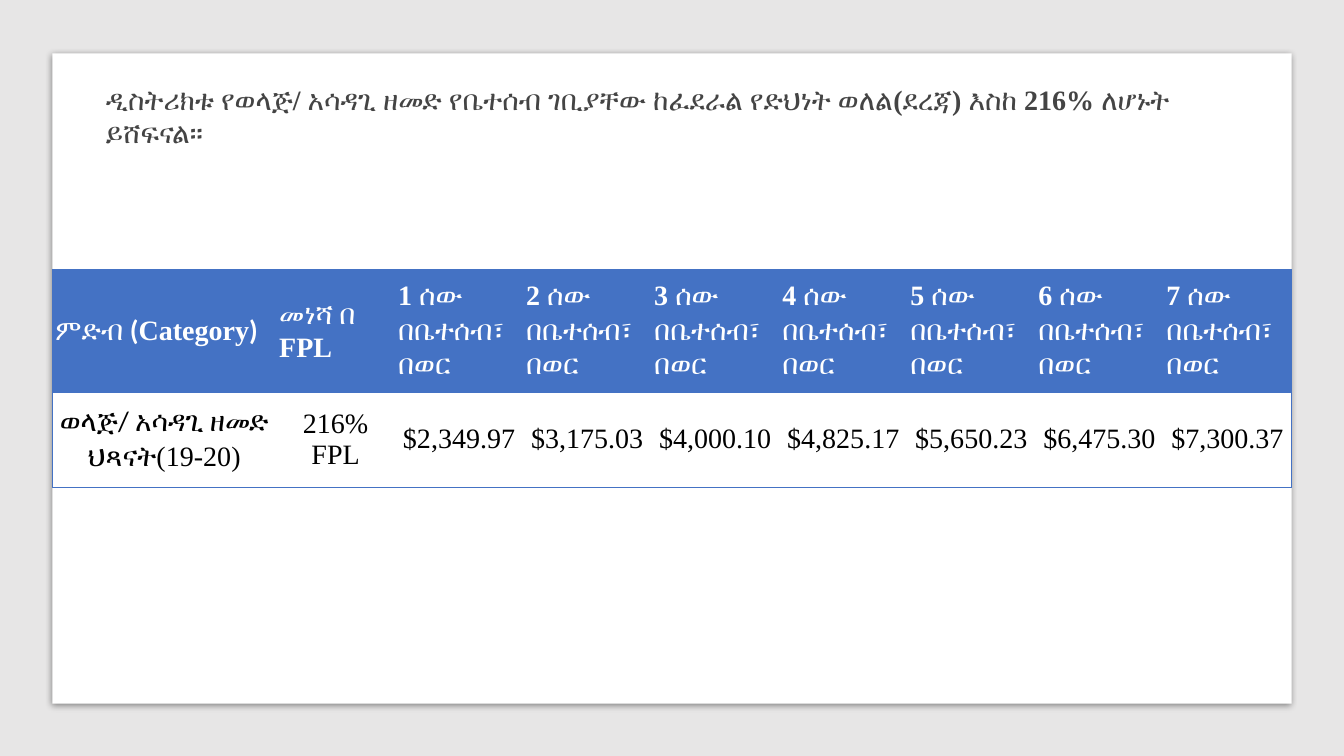
from lxml.etree import SubElement
from pptx import Presentation
from pptx.dml.color import RGBColor
from pptx.enum.shapes import MSO_SHAPE as Shape
from pptx.enum.text import MSO_ANCHOR as Anchor, PP_ALIGN as Align
from pptx.oxml import parse_xml
from pptx.oxml.ns import nsdecls, qn
from pptx.util import Inches, Pt

COLORS = {"backdrop": "E7E6E6", "card": "FFFFFF", "title": "444444",
          "accent": "4472C4", "header": "FFFFFF", "body": "000000"}
LATIN, ETHIOPIC = "Times New Roman", "Calibri"
NO_STYLE = "{2D5ABB26-0587-4C30-8999-92F81FD0307C}"

TITLE = "ዲስትሪክቱ የወላጅ/ አሳዳጊ ዘመድ የቤተሰብ ገቢያቸው ከፈደራል የድህነት ወለል(ደረጃ) እስከ 216% ለሆኑት ይሸፍናል፡፡"
HEADER = [
    [("ምድብ (", ETHIOPIC), ("Category", LATIN), (")", ETHIOPIC)],
    [("መነሻ በ", ETHIOPIC), (" FPL", LATIN)],
] + [[(f"{size} ", LATIN), ("ሰው በቤተሰብ፣ በወር", ETHIOPIC)] for size in range(1, 8)]
INCOMES = ["$2,349.97", "$3,175.03", "$4,000.10", "$4,825.17",
           "$5,650.23", "$6,475.30", "$7,300.37"]
BODY = [
    [("ወላጅ/ አሳዳጊ ዘመድ ህጻናት", ETHIOPIC), ("(19-20)", LATIN)],
] + [[(text, LATIN)] for text in ["216% FPL"] + INCOMES]


class SlideBuilder:
    """Draws on one slide; lengths are percentages of its width and height."""

    def __init__(self, prs):
        self.prs = prs
        self.s = prs.slides.add_slide(prs.slide_layouts[6])

    def x(self, share):
        return round(self.prs.slide_width * share / 100)

    def y(self, share):
        return round(self.prs.slide_height * share / 100)

    def box(self, left, top, width, height):
        return self.x(left), self.y(top), self.x(width), self.y(height)

    def color(self, name):
        return RGBColor.from_string(COLORS[name])

    def panel(self, area, color, shadow=False):
        sp = self.s.shapes.add_shape(Shape.RECTANGLE, *self.box(*area))
        sp.fill.solid()
        sp.fill.fore_color.rgb = self.color(color)
        sp.line.fill.background()
        sp.shadow.inherit = False
        if shadow:
            effects = sp._element.spPr.find(qn("a:effectLst"))
            outer = SubElement(effects, qn("a:outerShdw"), blurRad=str(Pt(5)),
                               dist=str(Pt(1.4)), dir="5400000", rotWithShape="0")
            black = SubElement(outer, qn("a:srgbClr"), val="000000")
            SubElement(black, qn("a:alpha"), val="43000")

    def add_runs(self, p, runs, color, bold):
        for text, font in runs:
            r = p.add_run()
            r.text = text
            r.font.size, r.font.bold, r.font.name = Pt(20), bold, font
            r.font.color.rgb = self.color(color)
            SubElement(r._r.rPr, qn("a:cs"), typeface=font)

    def title(self, area, text):
        tf = self.s.shapes.add_textbox(*self.box(*area)).text_frame
        tf.word_wrap = True
        tf.vertical_anchor = Anchor.MIDDLE
        tf.margin_left = tf.margin_right = tf.margin_top = tf.margin_bottom = 0
        tf.paragraphs[0].space_after = Pt(6)
        self.add_runs(tf.paragraphs[0], [(text, LATIN)], "title", True)

    def borders(self, cell, sides):
        """Outline the given sides (from "LRTB") and clear the others."""
        tcPr = cell._tc.get_or_add_tcPr()
        for i, side in enumerate("LRTB"):
            paint = (f'<a:solidFill><a:srgbClr val="{COLORS["accent"]}"/></a:solidFill>'
                     if side in sides else "<a:noFill/>")
            tcPr.insert(i, parse_xml(
                f'<a:ln{side} {nsdecls("a")} w="{Pt(0.5)}">{paint}</a:ln{side}>'))

    def table(self, left, top, widths, heights, rows):
        area = self.box(left, top, sum(widths), sum(heights))
        tbl = self.s.shapes.add_table(len(rows), len(widths), *area).table
        tbl._tbl.tblPr.find(qn("a:tableStyleId")).text = NO_STYLE
        tbl.horz_banding = False
        for column, width in zip(tbl.columns, widths):
            column.width = self.x(width)
        for row, height in zip(tbl.rows, heights):
            row.height = self.y(height)
        for i, row in enumerate(rows):
            for j, runs in enumerate(row):
                self.cell(tbl.cell(i, j), runs, header=i == 0)
                sides = "T" + "L" * (j == 0) + "R" * (j == len(row) - 1)
                self.borders(tbl.cell(i, j), sides + "B" * (i == len(rows) - 1))

    def cell(self, cell, runs, header):
        cell.vertical_anchor = Anchor.MIDDLE
        cell.margin_left = cell.margin_right = Inches(0.03)
        cell.margin_top = cell.margin_bottom = Inches(0.03)
        cell.fill.solid()
        cell.fill.fore_color.rgb = self.color("accent" if header else "card")
        p = cell.text_frame.paragraphs[0]
        p.alignment = Align.LEFT if header else Align.CENTER
        self.add_runs(p, runs, "header" if header else "body", header)


def main():
    prs = Presentation()
    prs.slide_width, prs.slide_height = Inches(13.33), Inches(7.5)
    slide = SlideBuilder(prs)
    slide.panel((0, 0, 100, 100), "backdrop")
    slide.panel((3.9, 7.07, 92.2, 86), "card", shadow=True)
    slide.title((7.88, 10.93, 80.35, 8.8), TITLE)
    slide.table(3.9, 35.6, [16.65, 8.85] + [9.53] * 7, [16.27, 12.53], [HEADER, BODY])
    prs.save("out.pptx")


if __name__ == "__main__":
    main()
